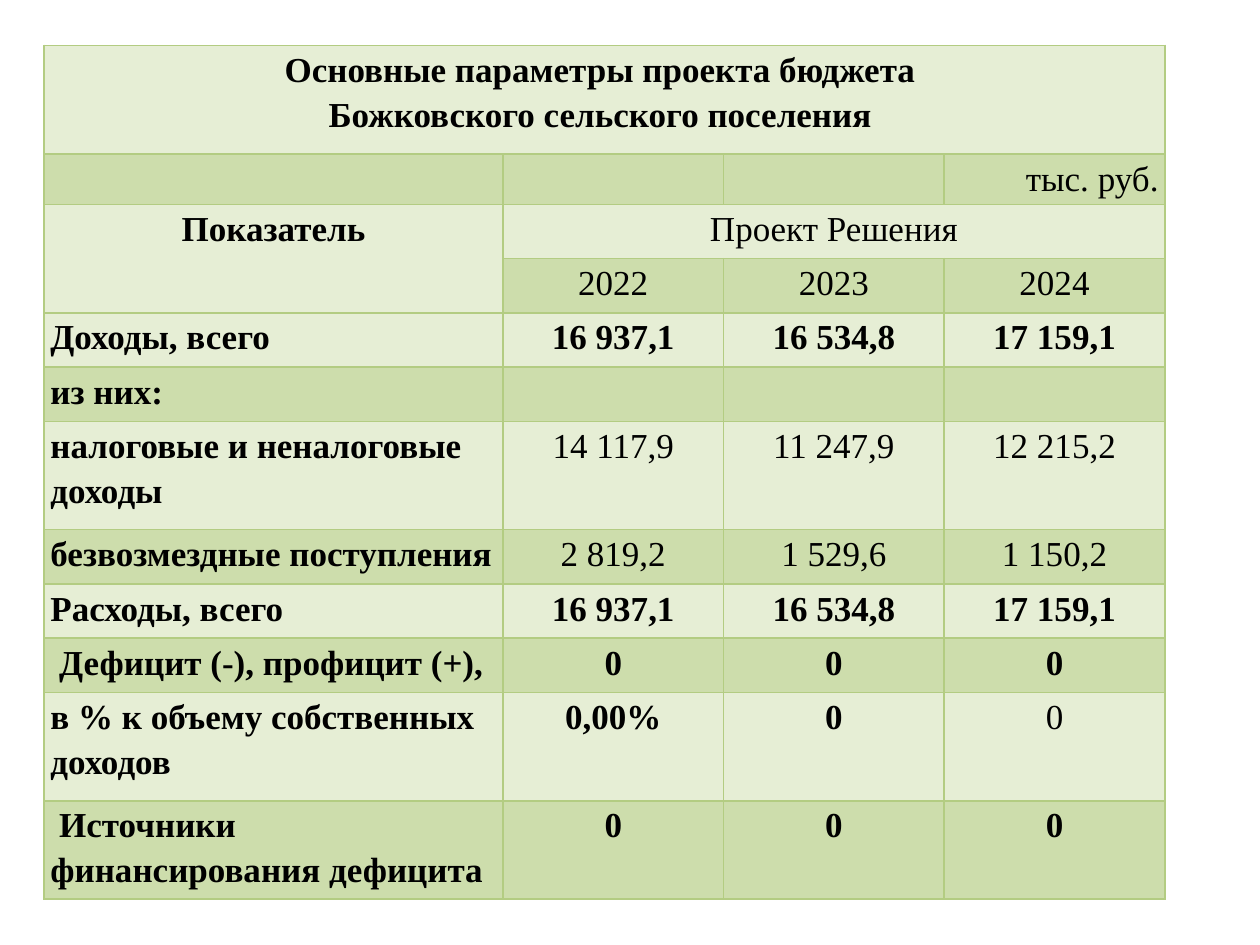
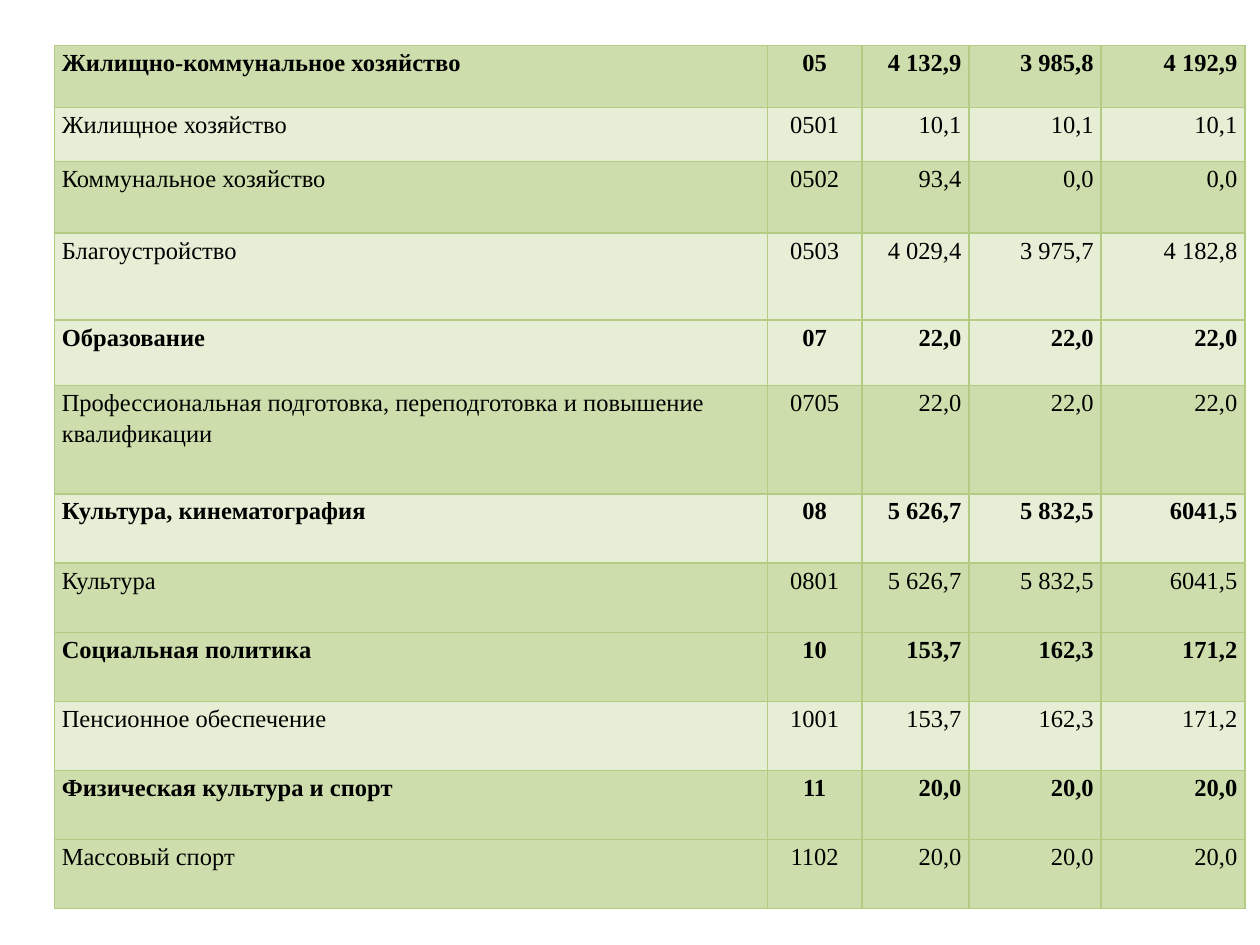
"""Build two slides with the budget tables of a rural settlement."""
import pptx
import pptx.dml.color
import pptx.enum.text
import pptx.oxml
import pptx.oxml.ns
import pptx.util

Pt = pptx.util.Pt
RGBColor = pptx.dml.color.RGBColor
LEFT = pptx.enum.text.PP_ALIGN.LEFT
CENTER = pptx.enum.text.PP_ALIGN.CENTER
RIGHT = pptx.enum.text.PP_ALIGN.RIGHT

FONT = "Times New Roman"
BLACK = RGBColor(0x00, 0x00, 0x00)
LIGHT = RGBColor(0xE6, 0xEE, 0xD5)
DARK = RGBColor(0xCD, 0xDD, 0xAC)
BORDER = RGBColor(0xB3, 0xCC, 0x82)
TABLE_TOP = Pt(26)


def add_grid(slide, left, widths, heights, fills, margin):
    """Add an empty table with filled rows and thin green borders."""
    grid = slide.shapes.add_table(
        len(heights), len(widths), Pt(left), TABLE_TOP, Pt(sum(widths)), Pt(sum(heights))
    ).table
    for column, width in zip(grid.columns, widths):
        column.width = Pt(width)
    for row, height, fill in zip(grid.rows, heights, fills):
        row.height = Pt(height)
        for cell in row.cells:
            cell.margin_left = cell.margin_right = Pt(margin)
            cell.margin_top = cell.margin_bottom = 0
            properties = cell._tc.get_or_add_tcPr()
            for side in ("lnL", "lnR", "lnT", "lnB"):
                properties.append(pptx.oxml.parse_xml(
                    f'<a:{side} {pptx.oxml.ns.nsdecls("a")} w="{Pt(1)}"><a:solidFill>'
                    f'<a:srgbClr val="{BORDER}"/></a:solidFill></a:{side}>'
                ))
            cell.fill.solid()
            cell.fill.fore_color.rgb = fill
    return grid


def write(cell, text, size, bold, align):
    """Write each line of the text as a paragraph of the cell."""
    for index, line in enumerate(text.split("\n")):
        frame = cell.text_frame
        paragraph = frame.add_paragraph() if index else frame.paragraphs[0]
        paragraph.alignment = align
        paragraph.line_spacing = 1.15
        run = paragraph.add_run()
        run.text = line
        run.font.name = FONT
        run.font.size = Pt(size)
        run.font.bold = bold
        run.font.color.rgb = BLACK


deck = pptx.Presentation()
deck.slide_width = Pt(720)
deck.slide_height = Pt(540)
blank = deck.slide_layouts[6]

parameters_slide = deck.slides.add_slide(blank)
parameters = add_grid(
    parameters_slide, 25.2, [262.2] + [126.1] * 3,
    [62, 28.8, 31, 31, 31, 31, 62, 31, 31, 31, 62, 56], [LIGHT, DARK] * 6, 3.6,
)
parameters.cell(0, 0).merge(parameters.cell(0, 3))
parameters.cell(2, 0).merge(parameters.cell(3, 0))
parameters.cell(2, 1).merge(parameters.cell(2, 3))

headings = [
    (0, 0, "Основные параметры проекта бюджета \nБожковского сельского поселения ", True, CENTER),
    (1, 3, "тыс. руб.", False, RIGHT),
    (2, 0, "Показатель", True, CENTER),
    (2, 1, "Проект Решения", False, CENTER),
    (3, 1, "2022", False, CENTER),
    (3, 2, "2023", False, CENTER),
    (3, 3, "2024", False, CENTER),
]
for row, column, text, bold, align in headings:
    write(parameters.cell(row, column), text, 20, bold, align)

indicators = [
    ("Доходы, всего", ["16 937,1", "16 534,8", "17 159,1"], [True] * 3),
    ("из них:", [], []),
    ("налоговые и неналоговые доходы", ["14 117,9", "11 247,9", "12 215,2"], [False] * 3),
    ("безвозмездные поступления", ["2 819,2", "1 529,6", "1 150,2"], [False] * 3),
    ("Расходы, всего", ["16 937,1", "16 534,8", "17 159,1"], [True] * 3),
    (" Дефицит (-), профицит (+),", ["0", "0", "0"], [True] * 3),
    ("в % к объему собственных доходов", ["0,00%", "0", "0"], [True, True, False]),
    (" Источники финансирования дефицита", ["0", "0", "0"], [True] * 3),
]
for row, (indicator, amounts, bolds) in enumerate(indicators, start=4):
    write(parameters.cell(row, 0), indicator, 20, True, LEFT)
    for column, (amount, bold) in enumerate(zip(amounts, bolds), start=1):
        write(parameters.cell(row, column), amount, 20, bold, CENTER)

expenses_slide = deck.slides.add_slide(blank)
expenses = [
    (35.3, DARK, "Жилищно-коммунальное хозяйство", "05", "4 132,9", "3 985,8", "4 192,9"),
    (31, LIGHT, "Жилищное хозяйство", "0501", "10,1", "10,1", "10,1"),
    (41, DARK, "Коммунальное хозяйство", "0502", "93,4", "0,0", "0,0"),
    (49.7, LIGHT, "Благоустройство", "0503", "4 029,4", "3 975,7", "4 182,8"),
    (37.4, LIGHT, "Образование", "07", "22,0", "22,0", "22,0"),
    (62, DARK, "Профессиональная подготовка, переподготовка и повышение квалификации",
     "0705", "22,0", "22,0", "22,0"),
    (39.5, LIGHT, "Культура, кинематография", "08", "5 626,7", "5 832,5", " 6041,5"),
    (39.5, DARK, "Культура", "0801", "5 626,7", "5 832,5", " 6041,5"),
    (39.5, DARK, "Социальная политика", "10", "153,7", "162,3", "171,2"),
    (39.5, LIGHT, "Пенсионное обеспечение", "1001", "153,7", "162,3", "171,2"),
    (39.5, DARK, "Физическая культура и спорт", "11", "20,0", "20,0", "20,0"),
    (39.5, DARK, "Массовый спорт", "1102", "20,0", "20,0", "20,0"),
]
sections = add_grid(
    expenses_slide, 31, [407.5, 54, 61.2, 75.6, 82.1],
    [expense[0] for expense in expenses], [expense[1] for expense in expenses], 4.3,
)
for row, (height, fill, *entries) in enumerate(expenses):
    is_section = len(entries[1]) == 2
    for column, (entry, align) in enumerate(zip(entries, [LEFT, CENTER, RIGHT, RIGHT, RIGHT])):
        write(sections.cell(row, column), entry, 14, is_section, align)

deck.save("out.pptx")
